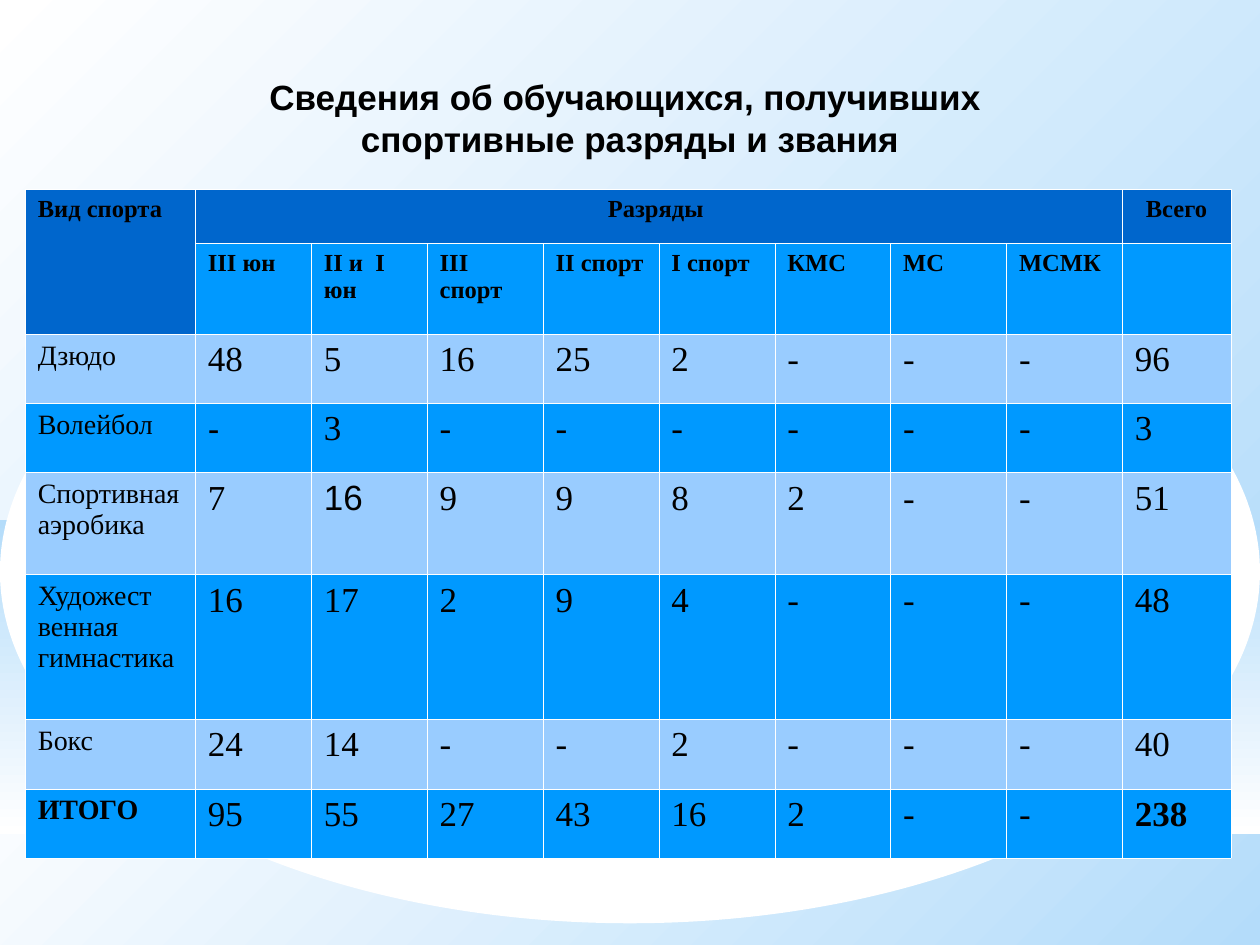
from dataclasses import dataclass

import lxml.etree
import pptx
import pptx.dml.color
import pptx.enum.shapes
import pptx.enum.text
import pptx.oxml.ns
import pptx.util

RGB = pptx.dml.color.RGBColor.from_string
SHAPES = pptx.enum.shapes.MSO_SHAPE
CENTER = pptx.enum.text.PP_ALIGN.CENTER
LEFT = pptx.enum.text.PP_ALIGN.LEFT
qn = pptx.oxml.ns.qn
Inches = pptx.util.Inches

COLORS = {
    "white": "FFFFFF",
    "black": "000000",
    "sky": "B4DCFA",
    "header": "0066CC",
    "dark": "0099FF",
    "light": "99CCFF",
}
SERIF = "Times New Roman"
SANS = "Arial"
WIDTH, HEIGHT = Inches(10), Inches(7.5)
COLUMNS = [1.35] + [0.92] * 8 + [0.86]
ROWS = [0.43, 0.72, 0.55, 0.55, 0.81, 1.15, 0.55, 0.55]


@dataclass
class Backdrop:
    kind: int
    top: float
    height: float
    stops: tuple
    angle: int = 0


@dataclass
class Style:
    size: int
    bold: bool = False
    name: str = SERIF
    align: int = LEFT


BACKDROPS = [
    Backdrop(SHAPES.RECTANGLE, 0.744, 0.256, ("white", "sky"), 315),
    Backdrop(SHAPES.RECTANGLE, 0, 0.744, ("white", "sky"), 315),
    Backdrop(SHAPES.RECTANGLE, 0.55, 0.333, ("sky", "white"), 270),
    Backdrop(SHAPES.OVAL, 0.233, 0.744, ("white",)),
]
TITLE = ["Сведения об обучающихся, получивших ", "спортивные разряды и звания"]
CELLS = [
    ["Вид спорта", "Разряды "] + [""] * 7 + ["Всего"],
    ["", "III юн", "II и  I юн", "III спорт", "II спорт", "I спорт",
     "КМС", "МС", "МСМК", ""],
    ["Дзюдо", "48", "5", "16", "25", "2", "-", "-", "-", "96"],
    ["Волейбол", "-", "3", "-", "-", "-", "-", "-", "-", "3"],
    ["Спортивная аэробика", "7", "16", "9", "9", "8", "2", "-", "-", "51"],
    ["Художест\nвенная гимнастика", "16", "17", "2", "9", "4", "-", "-", "-", "48"],
    ["Бокс", "24", "14", "-", "-", "2", "-", "-", "-", "40"],
    ["ИТОГО", "95", "55", "27", "43", "16", "2", "-", "-", "238"],
]
SPECIAL = {
    (0, 0): Style(14, True),
    (3, 1): Style(20, name=SANS),
    (4, 2): Style(20, name=SANS),
    (7, 0): Style(16, True),
    (7, 9): Style(20, True),
}


def style_at(row: int, col: int) -> Style:
    if (row, col) in SPECIAL:
        return SPECIAL[row, col]
    if row < 2:
        return Style(14, True, align=LEFT if row else CENTER)
    return Style(20 if col else 16)


def fill_at(row: int) -> str:
    if row == 0:
        return "header"
    return "dark" if row % 2 or row == 7 else "light"


def write(tf, lines: list, style: Style) -> None:
    for i, line in enumerate(lines):
        p = tf.paragraphs[0] if i == 0 else tf.add_paragraph()
        p.alignment = style.align
        r = p.add_run()
        r.text = line
        font = {"size": pptx.util.Pt(style.size), "bold": style.bold, "name": style.name}
        for key, value in font.items():
            setattr(r.font, key, value)
        r.font.color.rgb = RGB(COLORS["black"])


def draw_backdrop(slide, item: Backdrop) -> None:
    sp = slide.shapes.add_shape(
        item.kind, 0, int(item.top * HEIGHT), WIDTH, int(item.height * HEIGHT))
    sp.shadow.inherit = False
    sp.line.fill.background()
    if len(item.stops) == 1:
        sp.fill.solid()
        sp.fill.fore_color.rgb = RGB(COLORS[item.stops[0]])
        return
    sp.fill.gradient()
    sp.fill.gradient_angle = item.angle
    for stop, color in zip(sp.fill.gradient_stops, item.stops):
        stop.color.rgb = RGB(COLORS[color])


def draw_title(slide) -> None:
    sp = slide.shapes.title
    slide.shapes._spTree.append(sp._element)
    box = {"left": 0.05 * WIDTH, "top": 0.079 * HEIGHT,
           "width": 0.9 * WIDTH, "height": 0.09 * HEIGHT}
    for key, value in box.items():
        setattr(sp, key, int(value))
    tf = sp.text_frame
    frame = dict.fromkeys(["margin_left", "margin_top", "margin_right", "margin_bottom"], 0)
    frame |= {"word_wrap": True,
              "vertical_anchor": pptx.enum.text.MSO_ANCHOR.MIDDLE,
              "auto_size": pptx.enum.text.MSO_AUTO_SIZE.SHAPE_TO_FIT_TEXT}
    for key, value in frame.items():
        setattr(tf, key, value)
    write(tf, TITLE, Style(20, True, SANS, CENTER))


def add_borders(cell) -> None:
    tcPr = cell._tc.get_or_add_tcPr()
    for i, side in enumerate(("lnL", "lnR", "lnT", "lnB")):
        ln = lxml.etree.Element(qn(f"a:{side}"), w=str(pptx.util.Pt(0.06)))
        fill = lxml.etree.SubElement(ln, qn("a:solidFill"))
        lxml.etree.SubElement(fill, qn("a:srgbClr"), val=COLORS["white"])
        tcPr.insert(i, ln)


def draw_table(slide) -> None:
    table = slide.shapes.add_table(
        len(ROWS), len(COLUMNS), int(0.02 * WIDTH), int(0.2 * HEIGHT),
        Inches(sum(COLUMNS)), Inches(sum(ROWS))).table
    table.first_row = table.horz_banding = False
    for column, width in zip(table.columns, COLUMNS):
        column.width = Inches(width)
    for row, height in zip(table.rows, ROWS):
        row.height = Inches(height)
    table.cell(0, 0).merge(table.cell(1, 0))
    table.cell(0, 1).merge(table.cell(0, 8))
    for i, texts in enumerate(CELLS):
        for j, text in enumerate(texts):
            cell = table.cell(i, j)
            cell.fill.solid()
            cell.fill.fore_color.rgb = RGB(COLORS[fill_at(i)])
            add_borders(cell)
            if text:
                write(cell.text_frame, text.split("\n"), style_at(i, j))


def main() -> None:
    prs = pptx.Presentation()
    prs.slide_width, prs.slide_height = WIDTH, HEIGHT
    slide = prs.slides.add_slide(prs.slide_layouts[5])
    for item in BACKDROPS:
        draw_backdrop(slide, item)
    draw_title(slide)
    draw_table(slide)
    prs.save("out.pptx")


if __name__ == "__main__":
    main()
